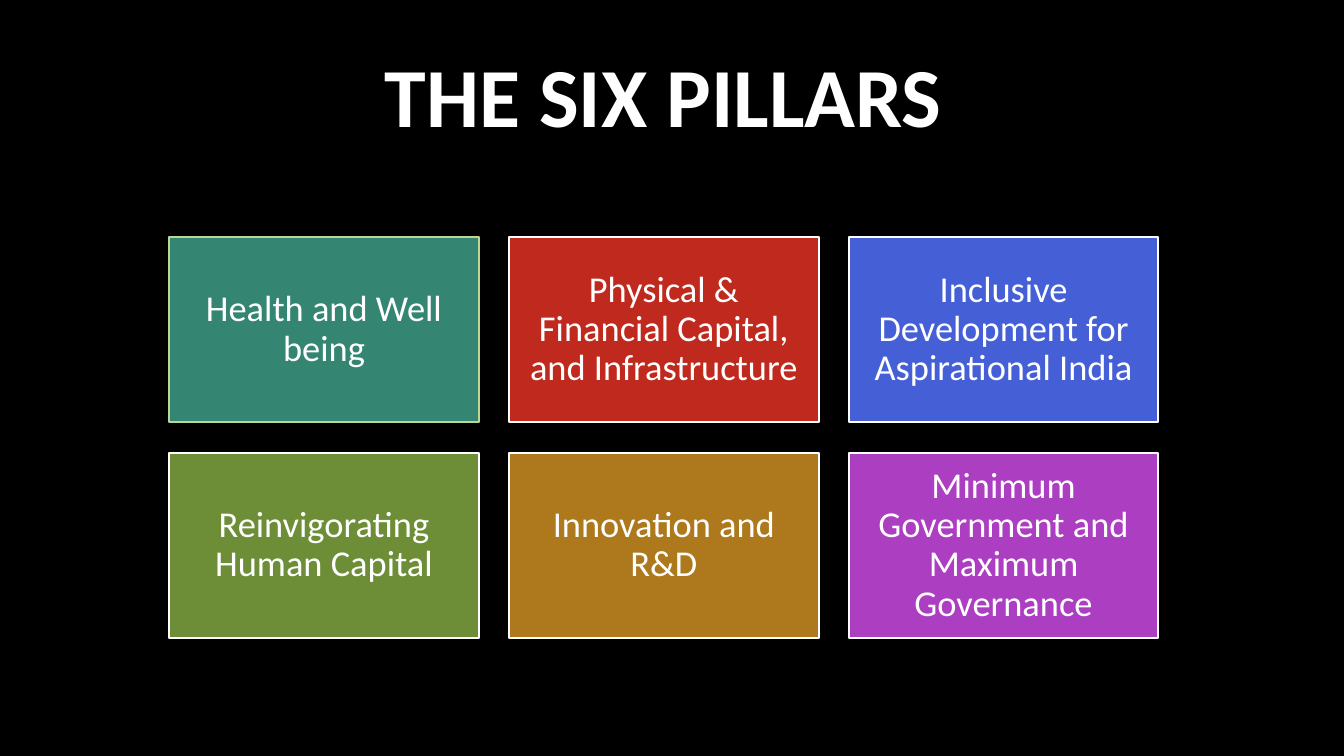
from pptx import Presentation
from pptx.dml.color import RGBColor
from pptx.enum.shapes import MSO_SHAPE
from pptx.enum.text import MSO_ANCHOR, PP_ALIGN
from pptx.util import Inches, Pt

BLACK = RGBColor(0x00, 0x00, 0x00)
WHITE = RGBColor(0xFF, 0xFF, 0xFF)
PALE_GREEN = RGBColor(0xBC, 0xD6, 0x94)
TEAL = RGBColor(0x34, 0x86, 0x72)
RED = RGBColor(0xC0, 0x2A, 0x1E)
BLUE = RGBColor(0x45, 0x5F, 0xD6)
GREEN = RGBColor(0x6D, 0x8E, 0x37)
OCHRE = RGBColor(0xAE, 0x78, 0x1D)
PURPLE = RGBColor(0xAC, 0x3E, 0xC1)

PILLARS = [
    ("Health and Well being", TEAL, PALE_GREEN),
    ("Physical & Financial Capital, and Infrastructure", RED, WHITE),
    ("Inclusive Development for Aspirational India", BLUE, WHITE),
    ("Reinvigorating Human Capital", GREEN, WHITE),
    ("Innovation and R&D", OCHRE, WHITE),
    ("Minimum Government and Maximum Governance", PURPLE, WHITE),
]
COLUMNS = 3
GRID_LEFT, GRID_TOP = 1.68, 2.35
CARD_WIDTH, CARD_HEIGHT, GAP = 3.07, 1.84, 0.3


def format_text(paragraph, size):
    paragraph.alignment = PP_ALIGN.CENTER
    paragraph.font.name = "Calibri"
    paragraph.font.size = Pt(size)
    paragraph.font.color.rgb = WHITE


presentation = Presentation()
presentation.slide_width = Inches(13.33)
presentation.slide_height = Inches(7.5)
slide = presentation.slides.add_slide(presentation.slide_layouts[5])
slide.background.fill.solid()
slide.background.fill.fore_color.rgb = BLACK

title = slide.shapes.title
title.left, title.top = Inches(0.41), Inches(0.19)
title.width, title.height = Inches(12.34), Inches(1.48)
title.text_frame.text = "THE SIX PILLARS"
title.text_frame.vertical_anchor = MSO_ANCHOR.MIDDLE
format_text(title.text_frame.paragraphs[0], 60)
title.text_frame.paragraphs[0].font.bold = True

for index, (label, fill_color, line_color) in enumerate(PILLARS):
    row, column = divmod(index, COLUMNS)
    card = slide.shapes.add_shape(
        MSO_SHAPE.RECTANGLE,
        Inches(GRID_LEFT + column * (CARD_WIDTH + GAP)),
        Inches(GRID_TOP + row * (CARD_HEIGHT + GAP)),
        Inches(CARD_WIDTH),
        Inches(CARD_HEIGHT),
    )
    card.shadow.inherit = False
    card.fill.solid()
    card.fill.fore_color.rgb = fill_color
    card.line.color.rgb = line_color
    card.line.width = Pt(1.5)

    text_frame = card.text_frame
    text_frame.word_wrap = True
    text_frame.vertical_anchor = MSO_ANCHOR.MIDDLE
    text_frame.margin_left = text_frame.margin_right = Inches(0.11)
    text_frame.margin_top = text_frame.margin_bottom = Inches(0.11)
    text_frame.text = label
    text_frame.paragraphs[0].line_spacing = 0.9
    format_text(text_frame.paragraphs[0], 26)

presentation.save("out.pptx")
